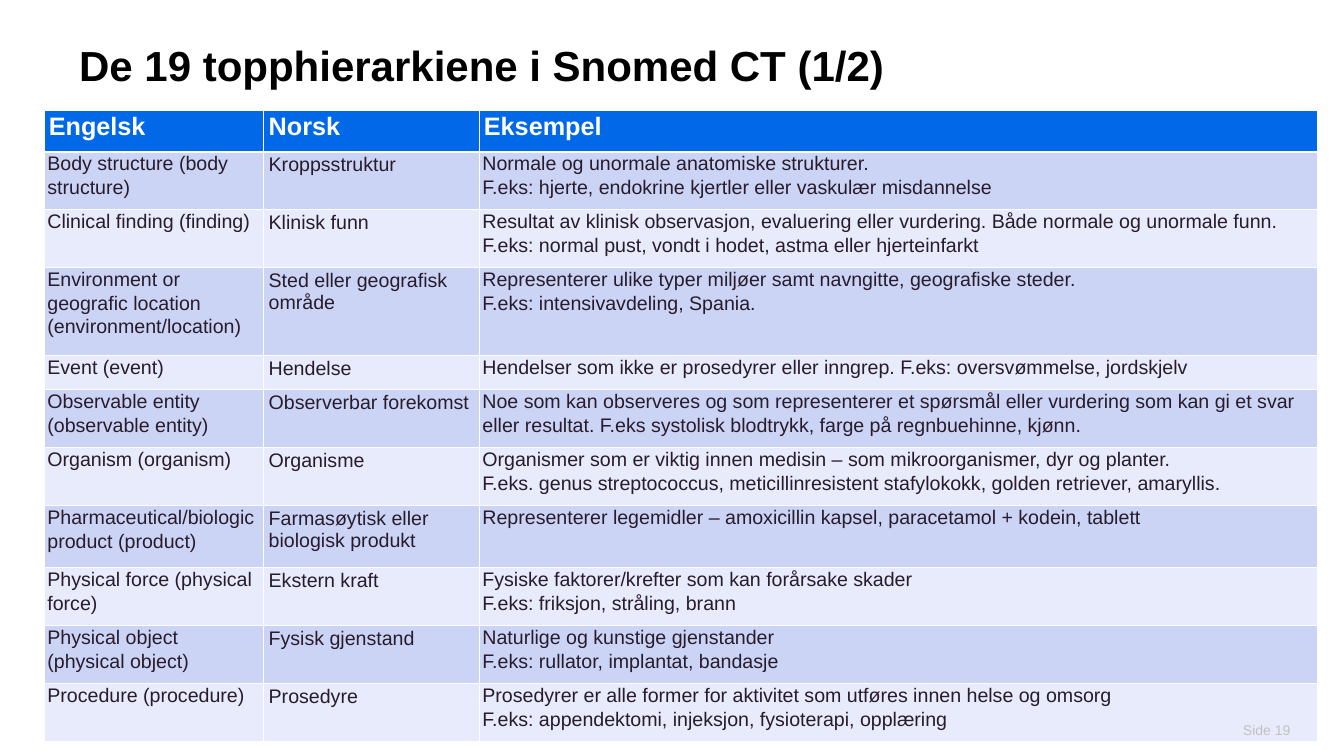
"""Build the slide with the first half of the Snomed CT top hierarchies."""
from lxml.etree import SubElement
from pptx import Presentation
from pptx.dml.color import RGBColor
from pptx.enum.text import MSO_ANCHOR as ANCHOR, PP_ALIGN as ALIGN
from pptx.oxml.ns import qn
from pptx.util import Inches, Pt

BLACK = RGBColor(0x00, 0x00, 0x00)
WHITE = RGBColor(0xFF, 0xFF, 0xFF)
GREY = RGBColor(0xC1, 0xC1, 0xC1)
INK = RGBColor(0x28, 0x1C, 0x2C)
BLUE = RGBColor(0x01, 0x69, 0xE8)
BANDS = [RGBColor(0xE7, 0xEB, 0xFB), RGBColor(0xCC, 0xD4, 0xF6)]

COLUMNS = [4.36, 4.27, 16.63]
ROWS = [
    (0.83, "Engelsk", "Norsk", "Eksempel"),
    (1.15, "Body structure (body structure)", "Kroppsstruktur",
     "Normale og unormale anatomiske strukturer. \n"
     "F.eks: hjerte, endokrine kjertler eller vaskulær misdannelse"),
    (1.15, "Clinical finding (finding)", "Klinisk funn",
     "Resultat av klinisk observasjon, evaluering eller vurdering. Både normale og unormale funn. "
     "F.eks: normal pust, vondt i hodet, astma eller hjerteinfarkt"),
    (1.74, "Environment or geografic location (environment/location)",
     "Sted eller geografisk område",
     "Representerer ulike typer miljøer samt navngitte, geografiske steder. \n"
     "F.eks: intensivavdeling, Spania."),
    (0.68, "Event (event)", "Hendelse",
     "Hendelser som ikke er prosedyrer eller inngrep. F.eks: oversvømmelse, jordskjelv"),
    (1.15, "Observable entity (observable entity)", "Observerbar forekomst",
     "Noe som kan observeres og som representerer et spørsmål eller vurdering som kan gi et svar "
     "eller resultat. F.eks systolisk blodtrykk, farge på regnbuehinne, kjønn."),
    (1.15, "Organism (organism)", "Organisme",
     "Organismer som er viktig innen medisin – som mikroorganismer, dyr og planter. \n"
     "F.eks. genus streptococcus, meticillinresistent stafylokokk, golden retriever, amaryllis."),
    (1.23, "Pharmaceutical/biologic product (product)", "Farmasøytisk eller biologisk produkt",
     "Representerer legemidler – amoxicillin kapsel, paracetamol + kodein, tablett"),
    (1.15, "Physical force (physical force)", "Ekstern kraft",
     "Fysiske faktorer/krefter som kan forårsake skader\n"
     "F.eks: friksjon, stråling, brann"),
    (1.15, "Physical object (physical object)", "Fysisk gjenstand",
     "Naturlige og kunstige gjenstander\n"
     "F.eks: rullator, implantat, bandasje"),
    (1.15, "Procedure (procedure)", "Prosedyre",
     "Prosedyrer er alle former for aktivitet som utføres innen helse og omsorg\n"
     "F.eks: appendektomi, injeksjon, fysioterapi, opplæring"),
]


def write(p, text, size, color, bold=False):
    p.text = text
    p.font.name = "Arial"
    p.font.size = Pt(size)
    p.font.color.rgb = color
    p.font.bold = bold


def add_label(s, box, text, size, color, bold, align, spacing):
    tf = s.shapes.add_textbox(*map(Inches, box)).text_frame
    tf.word_wrap = True
    tf.vertical_anchor = ANCHOR.MIDDLE
    tf.margin_left = tf.margin_top = tf.margin_right = tf.margin_bottom = 0
    p = tf.paragraphs[0]
    write(p, text, size, color, bold)
    p.alignment = align
    p.line_spacing = spacing


prs = Presentation()
prs.slide_width, prs.slide_height = Inches(26.66), Inches(15)
s = prs.slides.add_slide(prs.slide_layouts[6])

add_label(s, (1.57, 0.43, 23.59, 1.83), "De 19 topphierarkiene i Snomed CT (1/2)",
          60, BLACK, True, ALIGN.LEFT, 0.9)

heights = [row[0] for row in ROWS]
table = s.shapes.add_table(len(ROWS), len(COLUMNS), Inches(0.87), Inches(2.18),
                           Inches(sum(COLUMNS)), Inches(sum(heights))).table
for column, width in zip(table.columns, COLUMNS):
    column.width = Inches(width)

for i, (height, *texts) in enumerate(ROWS):
    table.rows[i].height = Inches(height)
    for j, text in enumerate(texts):
        cell = table.cell(i, j)
        p = cell.text_frame.paragraphs[0]
        if i == 0:
            write(p, text, 36, WHITE, True)
        else:
            write(p, text, 28, INK)
            if j != 1:
                p.line_spacing = 1.07
                cell.margin_left = cell.margin_right = Inches(0.07)
                cell.margin_top = cell.margin_bottom = 0
        for side in "LRTB":
            thick = (i, side) in [(0, "B"), (1, "T")]
            ln = SubElement(cell._tc.get_or_add_tcPr(), qn(f"a:ln{side}"),
                            w=str(Pt(3 if thick else 1)))
            SubElement(SubElement(ln, qn("a:solidFill")), qn("a:srgbClr"), val=str(WHITE))
        cell.fill.solid()
        cell.fill.fore_color.rgb = BANDS[i % 2] if i else BLUE

add_label(s, (24.03, 14.29, 1.57, 0.4), "Side 19", 20, GREY, False, ALIGN.RIGHT, 1.0)

prs.save("out.pptx")
